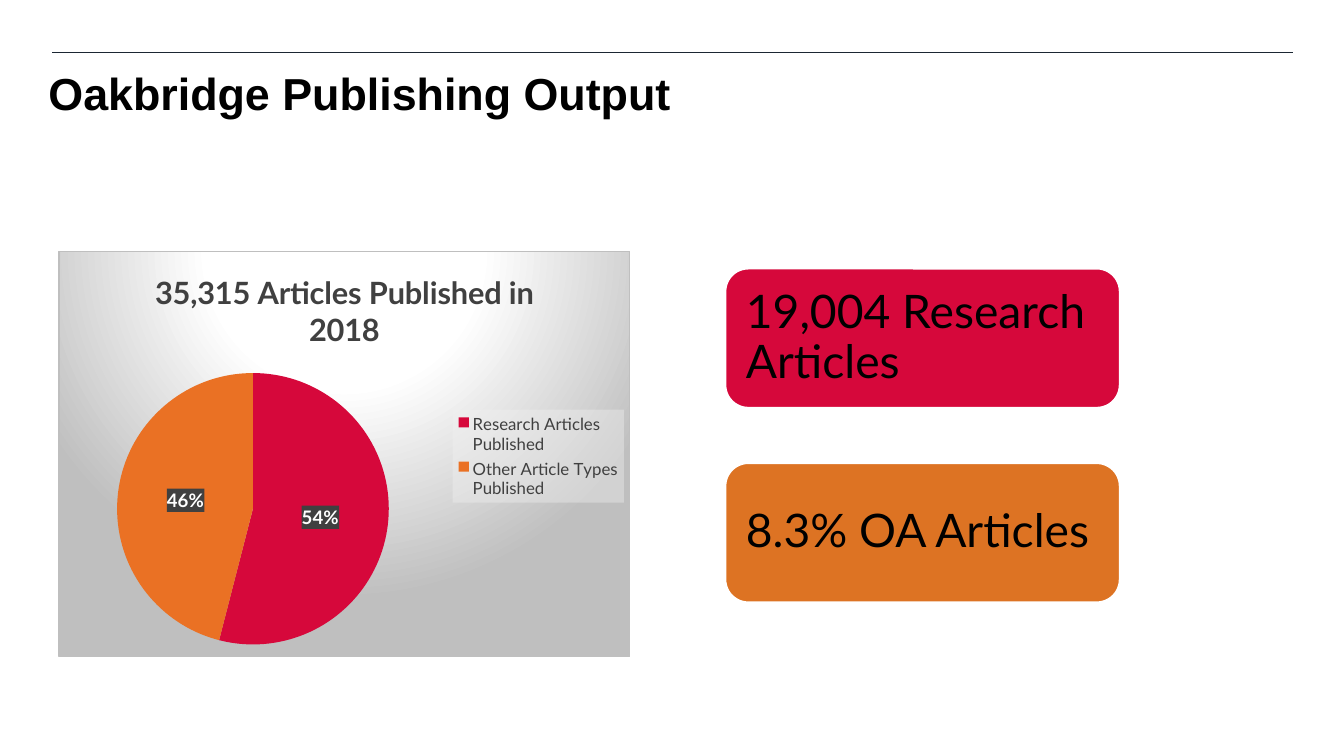
from pptx import Presentation
from pptx.chart.data import CategoryChartData
from pptx.dml.color import RGBColor
from pptx.enum.chart import XL_CHART_TYPE, XL_LABEL_POSITION, XL_LEGEND_POSITION
from pptx.enum.shapes import MSO_CONNECTOR, MSO_SHAPE
from pptx.enum.text import MSO_ANCHOR, MSO_AUTO_SIZE, PP_ALIGN
from pptx.oxml import parse_xml
from pptx.oxml.ns import nsdecls, qn
from pptx.util import Inches, Pt

BLACK = RGBColor(0x00, 0x00, 0x00)
WHITE = RGBColor(0xFF, 0xFF, 0xFF)
NAVY = RGBColor(0x1B, 0x27, 0x33)
GREY = RGBColor(0x40, 0x40, 0x40)
RED = RGBColor(0xD6, 0x08, 0x3B)
ORANGE = RGBColor(0xEA, 0x71, 0x24)
AMBER = RGBColor(0xDD, 0x73, 0x23)

CHART_FILL = """<a:gradFill><a:gsLst>
<a:gs pos="0"><a:srgbClr val="FFFFFF"/></a:gs>
<a:gs pos="39000"><a:srgbClr val="FFFFFF"/></a:gs>
<a:gs pos="100000"><a:srgbClr val="BFBFBF"/></a:gs></a:gsLst>
<a:path path="circle"><a:fillToRect l="50000" t="-80000" r="50000" b="180000"/></a:path>
</a:gradFill><a:ln w="9525"><a:solidFill><a:srgbClr val="BFBFBF"/></a:solidFill></a:ln>"""
LEGEND_FILL = '<a:solidFill><a:srgbClr val="F2F2F2"><a:alpha val="39000"/></a:srgbClr></a:solidFill>'
LABEL_FILL = '<a:solidFill><a:srgbClr val="404040"/></a:solidFill>'


def chart_style(content):
    """Return a chart shape-properties element."""
    return parse_xml(f'<c:spPr {nsdecls("c", "a")}>{content}</c:spPr>')


def manual_layout(left, top, width, height, target=""):
    """Return a chart layout given in fractions of the chart."""
    return parse_xml(
        f'<c:layout {nsdecls("c")}><c:manualLayout>{target}'
        '<c:xMode val="edge"/><c:yMode val="edge"/>'
        f'<c:x val="{left}"/><c:y val="{top}"/><c:w val="{width}"/><c:h val="{height}"/>'
        '</c:manualLayout></c:layout>')


def drop_layout(element):
    """Remove an existing layout from a chart part."""
    for layout in element.findall(qn("c:layout")):
        element.remove(layout)


class PageBuilder:
    """Hold the style and the current slide."""

    heading_font = "Arial"
    body_font = "Lato"

    def __init__(self, page):
        """Keep the slide to draw on."""
        self.page = page

    def style(self, font, size, color, bold=False, name=body_font):
        """Format a font."""
        font.name, font.size, font.bold = name, Pt(size), bold
        font.color.rgb = color

    def rule(self, left, top, right):
        """Draw a thin horizontal line."""
        line = self.page.shapes.add_connector(
            MSO_CONNECTOR.STRAIGHT, Inches(left), Inches(top), Inches(right), Inches(top))
        line.line.color.rgb = NAVY
        line.line.width = Pt(0.25)
        line._element.spPr.append(parse_xml(f'<a:effectLst {nsdecls("a")}/>'))

    def text(self, frame, wording, size, color, bold, name):
        """Fill a text frame with one left-aligned paragraph."""
        frame.text = wording
        frame.word_wrap = True
        frame.auto_size = MSO_AUTO_SIZE.NONE
        frame.vertical_anchor = MSO_ANCHOR.MIDDLE
        para = frame.paragraphs[0]
        para.alignment = PP_ALIGN.LEFT
        para.line_spacing = 0.9
        self.style(para.runs[0].font, size, color, bold, name)

    def title(self, wording, left, top, width, height):
        """Place the title placeholder."""
        box = self.page.shapes.title
        box.left, box.top = Inches(left), Inches(top)
        box.width, box.height = Inches(width), Inches(height)
        self.text(box.text_frame, wording, 32, BLACK, True, self.heading_font)

    def card(self, wording, color, left, top, width, height):
        """Draw a rounded card with its text."""
        box = self.page.shapes.add_shape(
            MSO_SHAPE.ROUNDED_RECTANGLE, Inches(left), Inches(top), Inches(width), Inches(height))
        box.shadow.inherit = False
        box.fill.solid()
        box.fill.fore_color.rgb = color
        box.line.color.rgb = WHITE
        box.line.width = Pt(2)
        frame = box.text_frame
        frame.margin_left = frame.margin_right = Inches(0.14)
        frame.margin_top = frame.margin_bottom = Inches(0.14)
        self.text(frame, wording, 33, BLACK, False, self.body_font)

    def pie(self, heading, slices, left, top, width, height):
        """Draw a pie chart from name, value and colour triples."""
        data = CategoryChartData()
        data.categories = [name for name, value, color in slices]
        data.add_series(heading, [value for name, value, color in slices])
        chart = self.page.shapes.add_chart(
            XL_CHART_TYPE.PIE, Inches(left), Inches(top), Inches(width), Inches(height), data).chart
        self.style(chart.font, 10, BLACK)
        chart.has_title = True
        chart.chart_title.text_frame.text = heading
        self.style(chart.chart_title.text_frame.paragraphs[0].runs[0].font, 22, GREY, True)
        chart_space = chart._chartSpace
        chart_space.find(qn("c:chart")).addnext(chart_style(CHART_FILL))

        plot = chart.plots[0]
        plot.vary_by_categories = True
        for index, (name, value, color) in enumerate(slices):
            fill = plot.series[0].points[index].format.fill
            fill.solid()
            fill.fore_color.rgb = color
        plot_area = chart_space.find(".//" + qn("c:plotArea"))
        drop_layout(plot_area)
        plot_area.insert(0, manual_layout(0.1, 0.3, 0.48, 0.67, '<c:layoutTarget val="inner"/>'))

        labels = plot.series[0].data_labels
        labels.show_percentage = True
        labels.show_value = False
        labels.number_format = "0%"
        labels.number_format_is_linked = False
        labels.position = XL_LABEL_POSITION.CENTER
        self.style(labels.font, 13.3, WHITE, True)
        labels._element.find(qn("c:txPr")).addprevious(chart_style(LABEL_FILL))

        chart.has_legend = True
        legend = chart.legend
        legend.position = XL_LEGEND_POSITION.RIGHT
        legend.include_in_layout = False
        self.style(legend.font, 12, GREY)
        legend_element = legend._element
        drop_layout(legend_element)
        legend_element.find(qn("c:overlay")).addprevious(manual_layout(0.69, 0.39, 0.3, 0.23))
        legend_element.find(qn("c:txPr")).addprevious(chart_style(LEGEND_FILL))


def main():
    """Build and save the slide."""
    deck = Presentation()
    deck.slide_width, deck.slide_height = Inches(13.33), Inches(7.5)
    builder = PageBuilder(deck.slides.add_slide(deck.slide_layouts[5]))
    builder.rule(0.52, 0.52, 12.82)
    builder.title("Oakbridge Publishing Output", 0.38, 0.57, 11.5, 0.77)
    slices = [("Research Articles Published", 54, RED), ("Other Article Types Published", 46, ORANGE)]
    builder.pie("35,315 Articles Published in 2018", slices, 0.58, 2.49, 5.67, 4.03)
    cards = [("19,004 Research Articles", RED), ("8.3% OA Articles", AMBER)]
    for index, (wording, color) in enumerate(cards):
        builder.card(wording, color, 7.19, 2.66 + 1.93 * index, 3.92, 1.39)
    deck.save("out.pptx")


if __name__ == "__main__":
    main()
